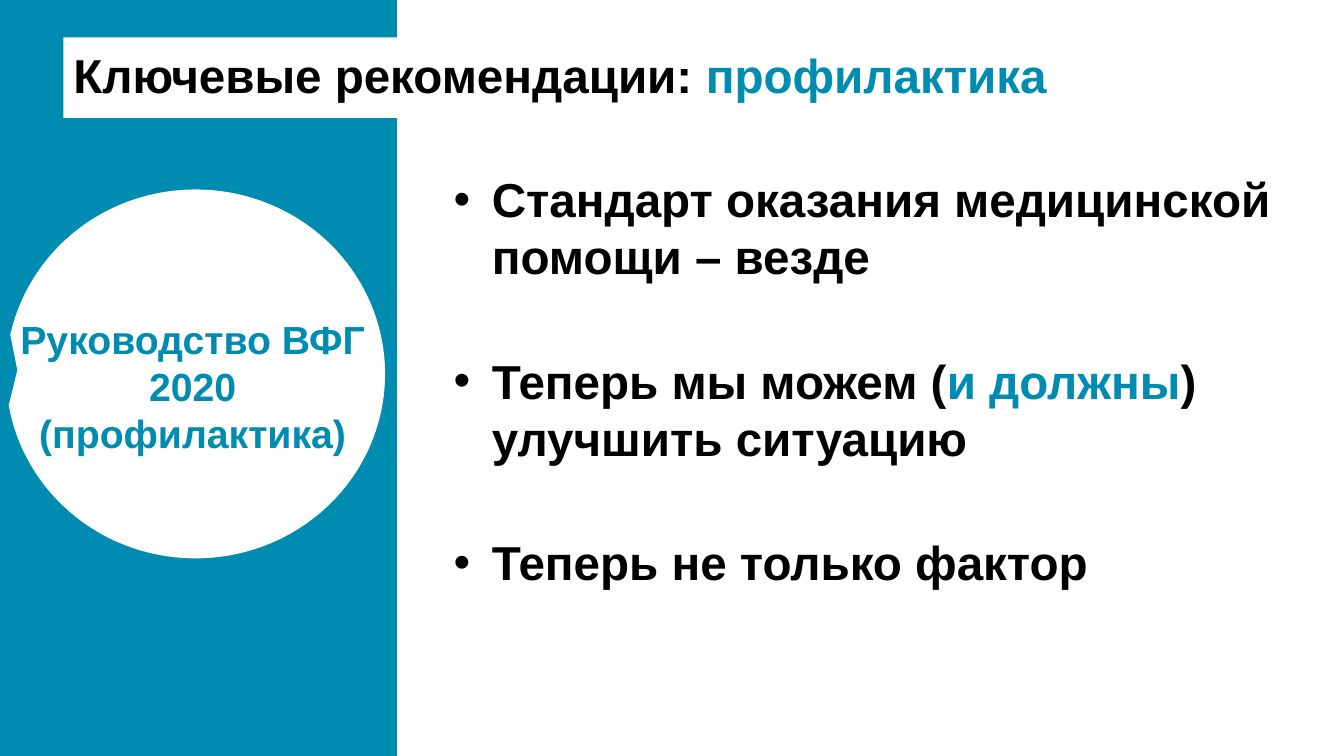
import dataclasses
import typing

import pptx
import pptx.dml.color
import pptx.enum.shapes
import pptx.enum.text
import pptx.oxml.ns
import pptx.slide
import pptx.util
from lxml import etree

Inches = pptx.util.Inches
Pt = pptx.util.Pt
RGB = pptx.dml.color.RGBColor
SHAPE = pptx.enum.shapes.MSO_SHAPE
ALIGN = pptx.enum.text.PP_ALIGN
ANCHOR = pptx.enum.text.MSO_ANCHOR


@dataclasses.dataclass(frozen=True)
class Theme:
    teal: RGB = RGB.from_string("008BB0")
    white: RGB = RGB.from_string("FFFFFF")
    black: RGB = RGB.from_string("000000")
    font: str = "Arial"
    main_size: int = 34
    badge_size: int = 28


THEME = Theme()


class Span(typing.NamedTuple):
    text: str
    color: RGB = THEME.black


@dataclasses.dataclass(frozen=True)
class Block:
    left: float
    top: float
    width: float
    height: float
    fill: typing.Optional[RGB] = None
    shape: SHAPE = SHAPE.RECTANGLE
    adjustments: tuple[float, ...] = ()
    paragraphs: tuple[tuple[Span, ...], ...] = ()
    size: int = THEME.main_size
    anchor: ANCHOR = ANCHOR.TOP
    bullets: bool = False
    formats: dict[str, typing.Any] = dataclasses.field(default_factory=dict)


BLOCKS = (
    # Side panel
    Block(0, 0, 3.94, 7.5, THEME.teal),
    # Bulleted recommendations
    Block(4.4, 1.64, 8.35, 5.63, THEME.white, bullets=True,
          formats={"alignment": ALIGN.LEFT, "space_before": Pt(48)},
          paragraphs=(
              (Span("Стандарт оказания медицинской помощи – везде"),),
              (Span("Теперь мы можем ("), Span("и должны", THEME.teal),
               Span(") улучшить ситуацию")),
              (Span("Теперь не только фактор"),),
          )),
    # Title band
    Block(0.63, 0.37, 12.7, 0.8, THEME.white, anchor=ANCHOR.MIDDLE,
          formats={"alignment": ALIGN.LEFT, "line_spacing": 0.9},
          paragraphs=((Span("Ключевые рекомендации: "),
                       Span("профилактика", THEME.teal)),)),
    # Guideline badge and its caption
    Block(0.06, 1.88, 3.76, 3.66, THEME.white,
          SHAPE.OVAL_CALLOUT, (-0.47, -0.01)),
    Block(0, 3.08, 3.82, 1.92, size=THEME.badge_size,
          formats={"alignment": ALIGN.CENTER},
          paragraphs=tuple((Span(line, THEME.teal),) for line in
                           ("Руководство ВФГ", "2020", "(профилактика)"))),
)


def add_bullet(p: typing.Any) -> None:
    pPr = p._p.get_or_add_pPr()
    pPr.set("marL", str(Inches(0.38)))
    pPr.set("indent", str(Inches(-0.38)))
    for tag, name, value in (("a:buFont", "typeface", THEME.font),
                             ("a:buChar", "char", "•")):
        etree.SubElement(pPr, pptx.oxml.ns.qn(tag)).set(name, value)


def fill_text(tf: typing.Any, block: Block) -> None:
    tf.word_wrap = True
    tf.vertical_anchor = block.anchor
    for i, spans in enumerate(block.paragraphs):
        p = tf.paragraphs[0] if i == 0 else tf.add_paragraph()
        for name, value in block.formats.items():
            if i or name != "space_before":
                setattr(p, name, value)
        if block.bullets:
            add_bullet(p)
        for span in spans:
            r = p.add_run()
            r.text = span.text
            font = {"name": THEME.font, "size": Pt(block.size), "bold": True}
            for name, value in font.items():
                setattr(r.font, name, value)
            r.font.color.rgb = span.color


def draw_block(s: pptx.slide.Slide, block: Block) -> None:
    box = [Inches(v) for v in
           (block.left, block.top, block.width, block.height)]
    if block.fill is None:
        sp = s.shapes.add_textbox(*box)
    else:
        sp = s.shapes.add_shape(block.shape, *box)
        sp.shadow.inherit = False
        sp.fill.solid()
        sp.fill.fore_color.rgb = block.fill
        sp.line.fill.background()
        for i, value in enumerate(block.adjustments):
            sp.adjustments[i] = value
    if block.paragraphs:
        fill_text(sp.text_frame, block)


def main() -> None:
    prs = pptx.Presentation()
    prs.slide_width, prs.slide_height = Inches(13.33), Inches(7.5)
    s = prs.slides.add_slide(prs.slide_layouts[6])
    for block in BLOCKS:
        draw_block(s, block)
    prs.save("out.pptx")


if __name__ == "__main__":
    main()
